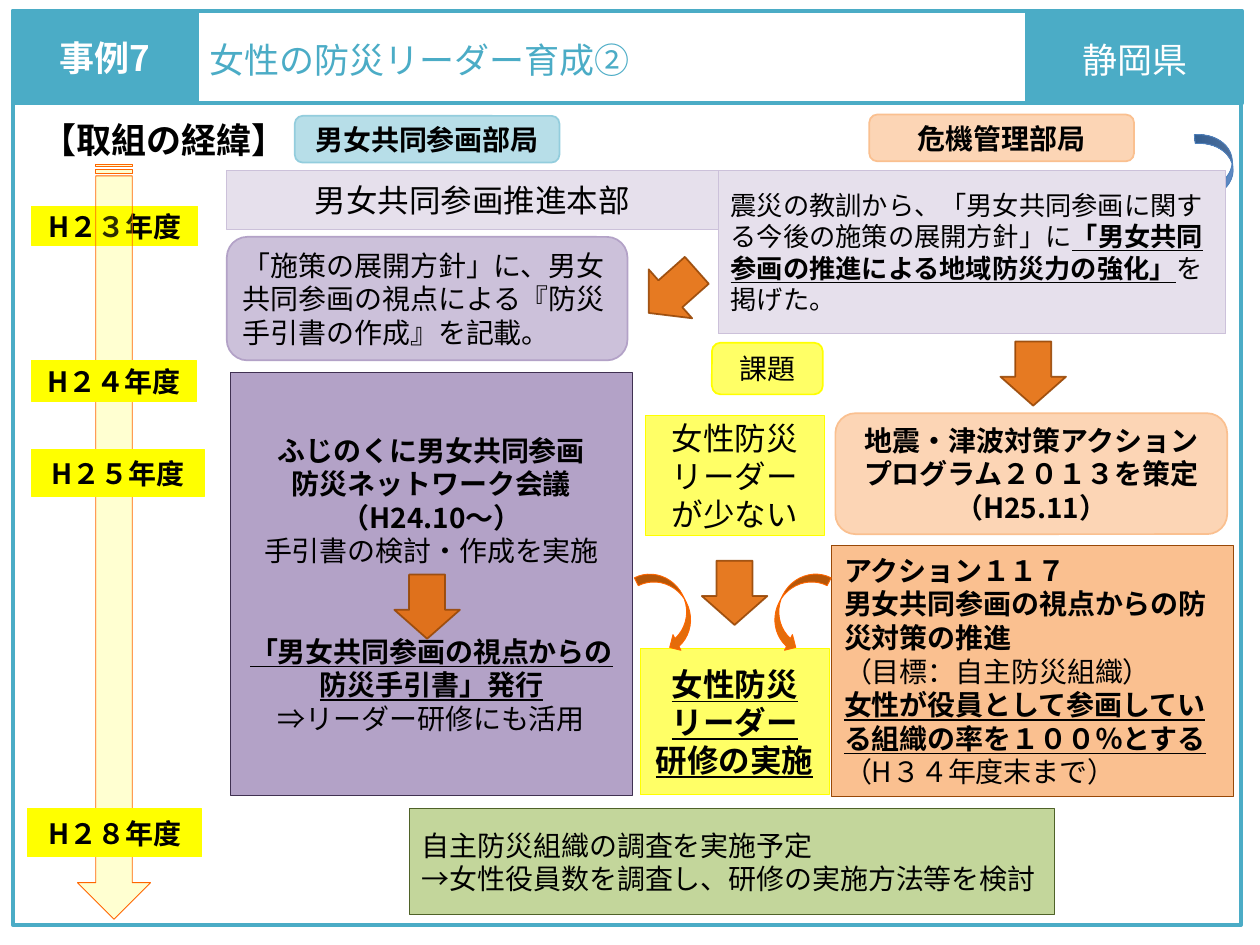
from dataclasses import dataclass

from lxml import etree
from pptx import Presentation
from pptx import util as u
from pptx.dml import color
from pptx.enum import shapes, text
from pptx.oxml import ns

FONT = "Noto Sans CJK JP"
KIND = shapes.MSO_SHAPE
LEFT, CENTER = text.PP_ALIGN.LEFT, text.PP_ALIGN.CENTER
BLACK, WHITE, TEAL = "000000", "FFFFFF", "4BACC6"
YELLOW, LEMON, ORANGE = "FFFF00", "FFFF66", "E46C0A"
LILAC, PALE_LILAC, PURPLE = "CCC1DA", "E6E0EC", "B3A2C7"
PEACH, APRICOT, BROWN = "FCD5B5", "FAC090", "984807"
Box = tuple[float, float, float, float]


@dataclass(frozen=True)
class Run:
    words: str
    bold: bool = False
    underline: bool = False


@dataclass(frozen=True)
class Para:
    runs: tuple[Run, ...]
    before: float = 0


@dataclass(frozen=True)
class Panel:
    box: Box
    fill: str | None
    line: str
    paras: tuple[Para, ...] = ()
    kind: KIND = KIND.RECTANGLE
    width: float = 0.5
    size: float = 16
    ink: str = BLACK
    align: text.PP_ALIGN = CENTER
    insets: Box = (0.1, 0.05, 0.1, 0.05)


@dataclass(frozen=True)
class Arrow:
    box: Box
    kind: KIND = KIND.DOWN_ARROW
    fill: str | tuple[str, str] = ORANGE
    line: str = BROWN
    width: float = 1
    opacity: int = 100
    line_opacity: int = 100
    turn: float = 0
    mirrored: bool = False
    adjust: tuple[float, ...] = ()


def para(words: str, bold: bool = False, underline: bool = False, before: float = 0) -> Para:
    return Para((Run(words, bold, underline),), before)


def rgb(value: str) -> color.RGBColor:
    return color.RGBColor.from_string(value)


def set_opacity(fill, percent: int) -> None:
    if percent < 100:
        tint = fill._xPr.find(ns.qn("a:solidFill"))[0]
        etree.SubElement(tint, ns.qn("a:alpha"), val=str(percent * 1000))


def paint(shape, fill: str | None, line: str, width: float) -> None:
    if fill:
        shape.fill.solid()
        shape.fill.fore_color.rgb = rgb(fill)
    else:
        shape.fill.background()
    shape.line.color.rgb = rgb(line)
    shape.line.width = u.Pt(width)


def write(shape, panel: Panel) -> None:
    frame = shape.text_frame
    frame.word_wrap = True
    frame.auto_size = text.MSO_AUTO_SIZE.NONE
    frame.vertical_anchor = text.MSO_ANCHOR.MIDDLE
    (frame.margin_left, frame.margin_top,
     frame.margin_right, frame.margin_bottom) = map(u.Inches, panel.insets)
    for index, item in enumerate(panel.paras):
        line = frame.add_paragraph() if index else frame.paragraphs[0]
        line.alignment = panel.align
        line.space_before = u.Pt(item.before)
        for part in item.runs:
            run = line.add_run()
            run.text = part.words
            font = run.font
            font.name, font.size = FONT, u.Pt(panel.size)
            font.bold, font.underline = part.bold, part.underline
            font.color.rgb = rgb(panel.ink)
            east_asian = etree.Element(ns.qn("a:ea"), typeface=FONT)
            font._element.find(ns.qn("a:latin")).addnext(east_asian)


def draw_panel(slide, panel: Panel) -> None:
    shape = slide.shapes.add_shape(panel.kind, *map(u.Inches, panel.box))
    shape.shadow.inherit = False
    paint(shape, panel.fill, panel.line, panel.width)
    write(shape, panel)


def draw_arrow(slide, arrow: Arrow) -> None:
    shape = slide.shapes.add_shape(arrow.kind, *map(u.Inches, arrow.box))
    shape.shadow.inherit = False
    shape.rotation = arrow.turn
    for index, value in enumerate(arrow.adjust):
        shape.adjustments[index] = value
    if arrow.mirrored:
        shape._element.spPr.find(ns.qn("a:xfrm")).set("flipH", "1")
    if isinstance(arrow.fill, tuple):
        paint(shape, None, arrow.line, arrow.width)
        shape.fill.gradient()
        shape.fill.gradient_angle = 270
        for stop, tone in zip(shape.fill.gradient_stops, arrow.fill):
            stop.color.rgb = rgb(tone)
    else:
        paint(shape, arrow.fill, arrow.line, arrow.width)
        set_opacity(shape.fill, arrow.opacity)
        set_opacity(shape.line.fill, arrow.line_opacity)


def draw_title(slide, panel: Panel) -> None:
    title = slide.shapes.title
    title.left, title.top, title.width, title.height = map(u.Inches, panel.box)
    paint(title, panel.fill, panel.line, panel.width)
    write(title, panel)


def draw_heading(slide, panel: Panel) -> None:
    heading = slide.shapes.add_textbox(*map(u.Inches, panel.box))
    write(heading, panel)
    heading.text_frame.word_wrap = False
    heading.text_frame.vertical_anchor = text.MSO_ANCHOR.TOP


def year(box: Box, words: str) -> Panel:
    return Panel(box, YELLOW, YELLOW, (para(words, True),))


def rounded(box: Box, fill: str, line: str, *paras: Para, **style) -> Panel:
    return Panel(box, fill, line, paras, KIND.ROUNDED_RECTANGLE, 1, **style)


def step(left: float, top: float, turn: float = 0) -> Arrow:
    return Arrow((left, top, 0.52, 0.51), opacity=90, line_opacity=90,
                 turn=turn, adjust=(0.55, 0.45))


def swoop(left: float, turn: float, mirrored: bool = False) -> Arrow:
    return Arrow((left, 4.69, 0.69, 0.28), KIND.CURVED_DOWN_ARROW, line="FF6600",
                 width=0.5, turn=turn, mirrored=mirrored)


def banner(left: float, width: float, fill: str | None, ink: str, words: str,
           bold: bool = False, align: text.PP_ALIGN = CENTER, top_inset: float = 0.08) -> Panel:
    return Panel((left, 0.09, width, 0.73), fill, TEAL, (para(words, bold),), width=2.25,
                 size=20, ink=ink, align=align, insets=(0.1, top_inset, 0.1, 0.05))


TITLE = banner(1.56, 8.29, None, TEAL, "女性の防災リーダー育成②", align=LEFT)
HEADING = Panel((0.23, 0.89, 2.17, 0.44), None, BLACK, (para("【取組の経緯】", True),),
                size=20, align=LEFT)
PARTS = (
    Panel((3.25, 6.42, 5.12, 0.84), "C3D69B", "4F6228",
          (para("自主防災組織の調査を実施予定"),
           para("→女性役員数を調査し、研修の実施方法等を検討")), align=LEFT),
    year((0.25, 1.64, 1.32, 0.31), "H２３年度"),
    Arrow((-2.09, 4.01, 5.99, 0.58), KIND.STRIPED_RIGHT_ARROW, YELLOW, "FF6600", 0.5,
          opacity=18, turn=90),
    year((0.25, 2.86, 1.31, 0.33), "H２４年度"),
    year((0.22, 6.42, 1.38, 0.38), "H２８年度"),
    year((0.25, 3.57, 1.37, 0.37), "H２５年度"),
    Arrow((9.37, 1.19, 0.55, 0.28), KIND.CURVED_DOWN_ARROW, ("688FC5", "3B72B3"), "4F81BD",
          0.5, turn=84.5),
    rounded((2.34, 0.92, 2.1, 0.37), "B7DEE8", "93CDDD", para("男女共同参画部局", True)),
    Panel((1.8, 1.35, 3.9, 0.47), PALE_LILAC, LILAC, (para("男女共同参画推進本部"),), size=18),
    rounded((1.8, 1.88, 3.18, 0.98), LILAC, PURPLE,
            para("「施策の展開方針」に、男女共同参画の視点による『防災手引書の作成』を記載。"),
            align=LEFT, insets=(0.08, 0.05, 0, 0.05)),
    step(5.08, 2.06, 48.4),
    Panel((1.83, 2.96, 3.19, 3.35), PURPLE, "403152",
          (para("ふじのくに男女共同参画", True),
           para("防災ネットワーク会議", True),
           para("（H24.10～）", True),
           para("手引書の検討・作成を実施"),
           para("「男女共同参画の視点からの防災手引書」発行", True, True, before=38),
           para("⇒リーダー研修にも活用"))),
    step(3.13, 4.56),
    rounded((5.65, 2.72, 0.88, 0.41), LEMON, YELLOW, para("課題")),
    rounded((6.63, 3.28, 3.11, 0.96), PEACH, APRICOT,
            para("地震・津波対策アクションプログラム２０１３を策定", True),
            para("（H25.11）", True)),
    step(7.94, 2.71),
    Panel((5.12, 3.3, 1.42, 0.95), LEMON, YELLOW, (para("女性防災リーダーが少ない"),), size=18),
    step(5.57, 4.45),
    Panel((5.08, 5.15, 1.5, 1.16), LEMON, YELLOW,
          (para("女性防災リーダー", True, True), para("研修の実施", True, True)), size=18),
    Panel((6.6, 4.33, 3.19, 1.99), APRICOT, BROWN,
          (para("アクション１１７", True),
           para("男女共同参画の視点からの防災対策の推進", True),
           para("（目標：自主防災組織）"),
           Para((Run("女性が役員として参画している組織の率を１００％とする", True, True),
                 Run("（H３４年度末まで）")))), align=LEFT),
    swoop(4.97, 63.1),
    swoop(5.97, 296.9, True),
    rounded((6.9, 0.91, 2.1, 0.37), PEACH, APRICOT, para("危機管理部局", True)),
    Panel((0.1, 0.09, 9.75, 7.25), None, TEAL, width=2.25),
    banner(0.1, 1.46, TEAL, WHITE, "事例7", True, top_inset=0.05),
    banner(8.15, 1.71, TEAL, WHITE, "静岡県"),
    Panel((5.7, 1.35, 4.03, 1.3), PALE_LILAC, LILAC,
          (Para((Run("震災の教訓から、「男女共同参画に関する今後の施策の展開方針」に"),
                 Run("「男女共同参画の推進による地域防災力の強化」", True, True),
                 Run("を掲げた。"))),), size=15, align=LEFT),
)


def main() -> None:
    deck = Presentation()
    deck.slide_width, deck.slide_height = u.Inches(10), u.Inches(7.5)
    slide = deck.slides.add_slide(deck.slide_layouts[5])
    draw_title(slide, TITLE)
    for part in PARTS:
        (draw_arrow if isinstance(part, Arrow) else draw_panel)(slide, part)
    draw_heading(slide, HEADING)
    deck.save("out.pptx")


if __name__ == "__main__":
    main()
